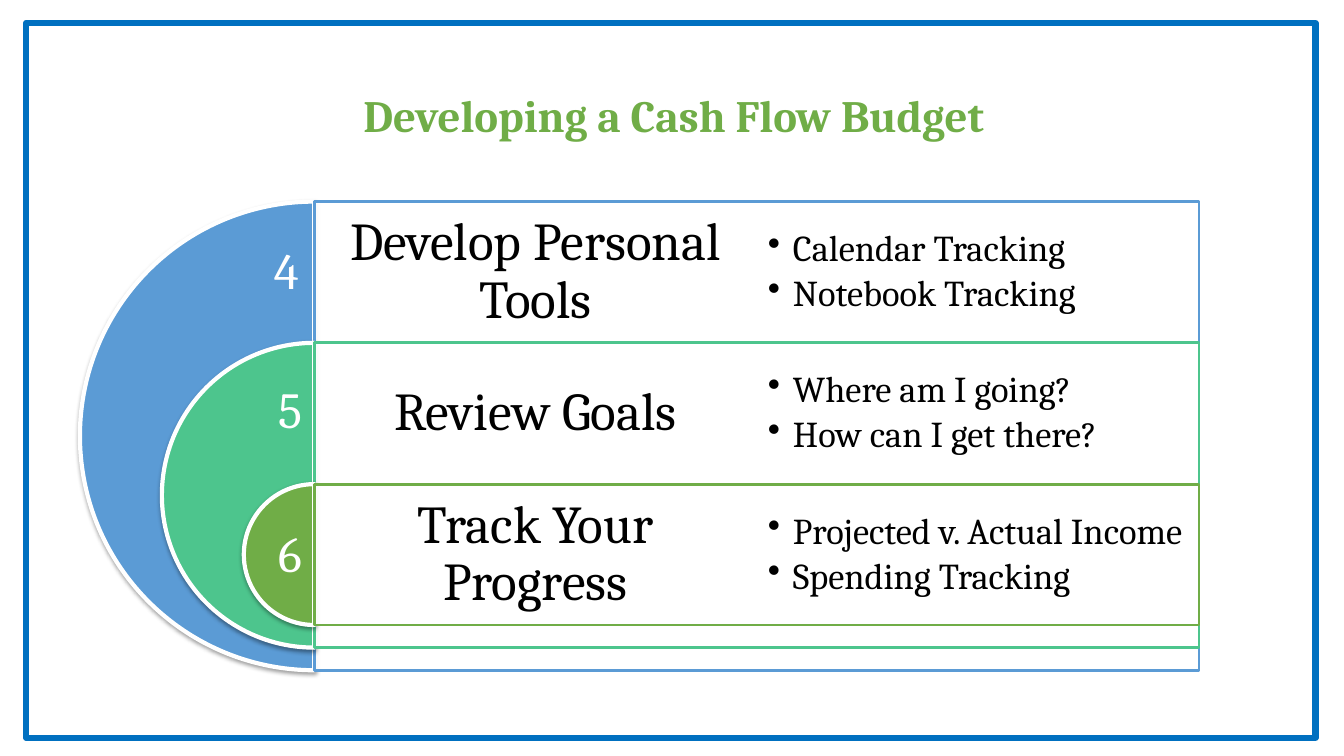
from lxml import etree
from pptx import Presentation
from pptx.dml.color import RGBColor
from pptx.enum import shapes, text
from pptx.oxml import parse_xml
from pptx.oxml.ns import nsdecls, qn
from pptx.util import Cm, Pt

FONT = "Cambria"
ROW_HEIGHT = 3.56
DIAMETER_STEP = 4.13
# number, its left and its drop below the row top, colour, heading, bullets
STEPS = [
    ("4", 6.65, 0.81, "5B9BD5", "Develop Personal Tools",
     ["Calendar Tracking", "Notebook Tracking"]),
    ("5", 6.76, 0.76, "4DC58D", "Review Goals",
     ["Where am I going?", "How can I get there?"]),
    ("6", 6.76, 0.84, "70AD47", "Track Your Progress",
     ["Projected v. Actual Income", "Spending Tracking"]),
]


def color(hex_string):
    return RGBColor.from_string(hex_string)


def add_figure(slide, kind, box, fill=None, line=None, width=1, opacity=None):
    """Add a preset shape; box is left, top, width, height in cm."""
    shape = slide.shapes.add_shape(kind, *map(Cm, box))
    shape.shadow.inherit = False
    if fill:
        shape.fill.solid()
        shape.fill.fore_color.rgb = color(fill)
    else:
        shape.fill.background()
    if opacity:
        fill_color = shape._element.spPr.find(qn("a:solidFill"))[0]
        etree.SubElement(fill_color, qn("a:alpha"), val=str(opacity * 1000))
    if line:
        shape.line.color.rgb = color(line)
        shape.line.width = Pt(width)
    else:
        shape.line.fill.background()
    return shape


def add_soft_shadow(shape):
    effects = shape._element.spPr.find(qn("a:effectLst"))
    effects.append(parse_xml(
        f'<a:outerShdw {nsdecls("a")} blurRad="40000" dist="20000" dir="5400000"'
        ' rotWithShape="0"><a:srgbClr val="000000"><a:alpha val="38000"/>'
        '</a:srgbClr></a:outerShdw>'))


def write(shape, lines, size, hex_string="000000", bold=False, align=None,
          anchor=text.MSO_ANCHOR.MIDDLE, inset=None, spacing=None, after=None,
          bullets=False):
    frame = shape.text_frame
    frame.word_wrap = True
    frame.vertical_anchor = anchor
    if inset is not None:
        frame.margin_left = frame.margin_right = Cm(inset)
        frame.margin_top = frame.margin_bottom = Cm(inset)
    for index, line in enumerate(lines):
        paragraph = frame.paragraphs[0] if index == 0 else frame.add_paragraph()
        paragraph.alignment = align
        paragraph.line_spacing = spacing
        paragraph.space_after = after
        run = paragraph.add_run()
        run.text = line
        run.font.name = FONT
        run.font.size = Pt(size)
        run.font.bold = bold
        run.font.color.rgb = color(hex_string)
        if bullets:
            properties = paragraph._p.get_or_add_pPr()
            properties.set("marL", str(Cm(0.635)))
            properties.set("indent", str(-Cm(0.635)))
            etree.SubElement(properties, qn("a:buChar"), char="•")


def add_text(slide, box, lines, size, **style):
    write(slide.shapes.add_textbox(*map(Cm, box)), lines, size, **style)


def add_step(slide, box, step):
    """Place a half disc left of the box, and its texts in the box's top row."""
    left, top, width, height = box
    number, number_left, number_drop, hue, heading, points = step
    disc = add_figure(slide, shapes.MSO_SHAPE.PIE,
                      (left - height / 2, top, height, height), hue, "FFFFFF", 3)
    disc.adjustments[0], disc.adjustments[1] = 54, 162
    add_soft_shadow(disc)
    add_figure(slide, shapes.MSO_SHAPE.RECTANGLE, box, "FFFFFF", hue, 2, opacity=90)
    column = width / 2
    add_text(slide, (left, top, column, ROW_HEIGHT), [heading], 38,
             align=text.PP_ALIGN.CENTER, inset=0.4, spacing=0.9)
    add_text(slide, (left + column, top, column, ROW_HEIGHT), points, 26,
             inset=0.28, spacing=0.9, after=Pt(4), bullets=True)
    add_text(slide, (number_left, top + number_drop, 3.5, 1.8), [number], 36,
             hex_string="FFFFFF", anchor=text.MSO_ANCHOR.TOP)


def add_steps(slide, box):
    left, top, width, height = box
    for index, step in enumerate(STEPS):
        add_step(slide, (left, top + index * ROW_HEIGHT, width,
                         height - index * DIAMETER_STEP), step)


def add_title(slide, box):
    banner = add_figure(slide, shapes.MSO_SHAPE.RECTANGLE, box, "FFFFFF")
    write(banner, ["Developing a Cash Flow Budget"], 32, "70AD47", bold=True,
          align=text.PP_ALIGN.CENTER)


def main():
    presentation = Presentation()
    presentation.slide_width, presentation.slide_height = Cm(33.87), Cm(19.05)
    slide = presentation.slides.add_slide(presentation.slide_layouts[6])
    add_figure(slide, shapes.MSO_SHAPE.RECTANGLE, (0.66, 0.58, 32.49, 18.01),
               line="0070C0", width=4.5)
    add_steps(slide, (7.92, 5.08, 22.3, 11.81))
    add_title(slide, (2, 1.14, 29.97, 3.48))
    presentation.save("out.pptx")


if __name__ == "__main__":
    main()
